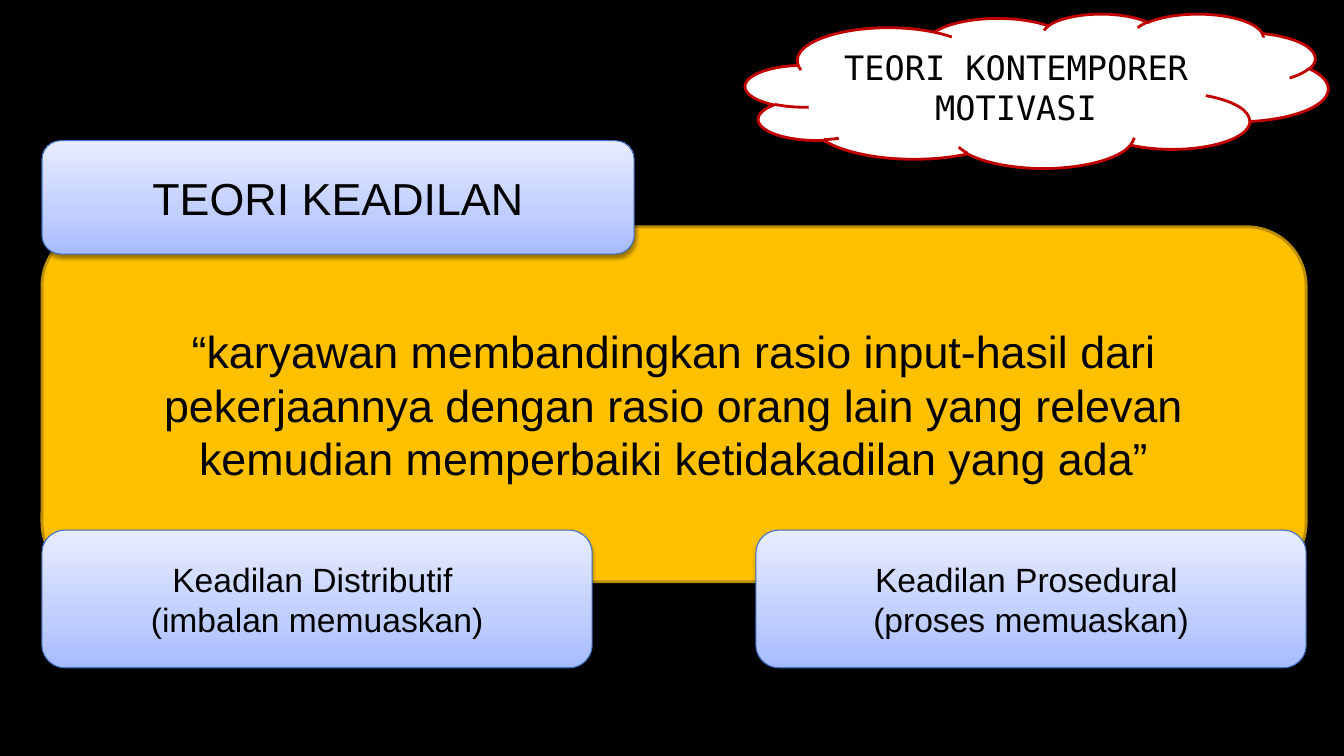
import pptx
import pptx.dml.color
import pptx.enum.shapes
import pptx.enum.text
import pptx.oxml
import pptx.oxml.ns
import pptx.util

RGBColor = pptx.dml.color.RGBColor
Shapes = pptx.enum.shapes.MSO_SHAPE

PX = 9525
BLACK = RGBColor(0x00, 0x00, 0x00)
WHITE = RGBColor(0xFF, 0xFF, 0xFF)
RED = RGBColor(0xC0, 0x00, 0x00)
GOLD = RGBColor(0xFF, 0xC0, 0x00)
DARK_GOLD = RGBColor(0xBD, 0x8E, 0x00)
BLUE = RGBColor(0x3F, 0x6F, 0xC3)
PALE_BLUES = (
    (0, RGBColor(0xA6, 0xBB, 0xFF)),
    (35, RGBColor(0xC0, 0xCE, 0xFF)),
    (100, RGBColor(0xE7, 0xEC, 0xFF)),
)


def add_panel(slide, box, kind, line_color, line_width, lines, size, font="Arial"):
    shape = slide.shapes.add_shape(kind, *(length * PX for length in box))
    shape.shadow.inherit = False
    shape.line.color.rgb = line_color
    shape.line.width = pptx.util.Pt(line_width)
    frame = shape.text_frame
    frame.word_wrap = True
    frame.vertical_anchor = pptx.enum.text.MSO_ANCHOR.MIDDLE
    for index, text in enumerate(lines):
        paragraph = frame.add_paragraph() if index else frame.paragraphs[0]
        paragraph.alignment = pptx.enum.text.PP_ALIGN.CENTER
        run = paragraph.add_run()
        run.text = text
        run.font.name = font
        run.font.size = pptx.util.Pt(size)
        run.font.color.rgb = BLACK
    return shape


def add_solid_panel(slide, box, kind, fill_color, *style):
    shape = add_panel(slide, box, kind, *style)
    shape.fill.solid()
    shape.fill.fore_color.rgb = fill_color


def add_glossy_panel(slide, box, lines, size):
    shape = add_panel(slide, box, Shapes.ROUNDED_RECTANGLE, BLUE, 0.75, lines, size)
    shape.fill.gradient()
    shape.fill.gradient_angle = 90
    properties = shape.element.spPr
    namespace = pptx.oxml.ns.nsdecls("a")
    stops = properties.find(".//" + pptx.oxml.ns.qn("a:gsLst"))
    for stop in list(stops):
        stops.remove(stop)
    for position, color in PALE_BLUES:
        stops.append(pptx.oxml.parse_xml(
            f'<a:gs {namespace} pos="{position * 1000}"><a:srgbClr val="{color}"/></a:gs>'))
    effects = properties.find(pptx.oxml.ns.qn("a:effectLst"))
    effects.append(pptx.oxml.parse_xml(
        f'<a:outerShdw {namespace} blurRad="{pptx.util.Pt(3.1)}" dist="{pptx.util.Pt(1.6)}"'
        f' dir="5400000" rotWithShape="0"><a:srgbClr val="{BLACK}">'
        '<a:alpha val="38000"/></a:srgbClr></a:outerShdw>'))


def add_topic_cloud(slide, box):
    add_solid_panel(slide, box, Shapes.CLOUD, WHITE, RED, 2,
                    ["TEORI KONTEMPORER MOTIVASI"], 24, "DejaVu Sans Mono")


def add_theory(slide, box):
    left, top, width, height = box
    quote = ("“karyawan membandingkan rasio input-hasil dari pekerjaannya dengan rasio "
             "orang lain yang relevan kemudian memperbaiki ketidakadilan yang ada”")
    add_solid_panel(slide, (left, top + 82, width, 338), Shapes.ROUNDED_RECTANGLE,
                    GOLD, DARK_GOLD, 2, [quote], 32)
    add_glossy_panel(slide, (left, top, 564, 108), ["TEORI KEADILAN"], 32)
    kinds = (
        ("Keadilan Distributif ", "(imbalan memuaskan)"),
        ("Keadilan Prosedural ", "(proses memuaskan)"),
    )
    kind_width, kind_height = 524, 131
    for index, lines in enumerate(kinds):
        kind_left = left + index * (width - kind_width)
        add_glossy_panel(slide, (kind_left, top + height - kind_height,
                                 kind_width, kind_height), lines, 24)


def main():
    presentation = pptx.Presentation()
    presentation.slide_width = 1280 * PX
    presentation.slide_height = 720 * PX
    slide = presentation.slides.add_slide(presentation.slide_layouts[6])
    slide.background.fill.solid()
    slide.background.fill.fore_color.rgb = BLACK
    add_topic_cloud(slide, (710, 13, 555, 147))
    add_theory(slide, (40, 134, 1204, 502))
    presentation.save("out.pptx")


if __name__ == "__main__":
    main()
